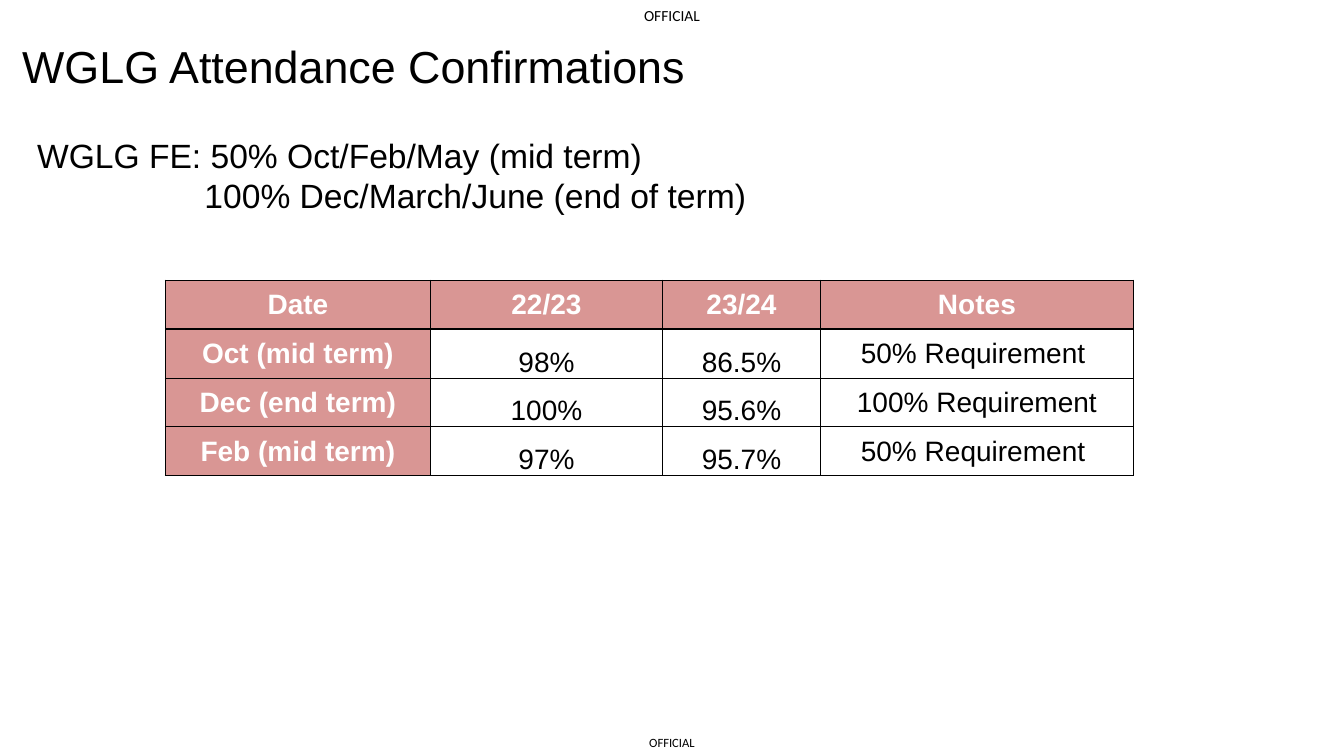
from lxml.etree import SubElement
from pptx import Presentation
from pptx.dml.color import RGBColor
from pptx.enum.text import MSO_ANCHOR as ANCHOR, PP_ALIGN as ALIGN
from pptx.oxml.ns import qn
from pptx.util import Inches, Pt


def format_text(p, size, font="Arial", color="000000", bold=False, align=ALIGN.LEFT):
    p.alignment = align
    for r in p.runs:
        r.font.size, r.font.name, r.font.bold = Pt(size), font, bold
        r.font.color.rgb = RGBColor.from_string(color)


def add_border(cell, side, width):
    ln = SubElement(cell._tc.get_or_add_tcPr(), qn(f"a:{side}"), w=str(Pt(width)))
    SubElement(SubElement(ln, qn("a:solidFill")), qn("a:srgbClr"), val="000000")


prs = Presentation()
prs.slide_width, prs.slide_height = Inches(13.33), Inches(7.5)
s = prs.slides.add_slide(prs.slide_layouts[5])

# Title
title = s.shapes.title
title.left, title.top = Inches(0.12), Inches(0.28)
title.width, title.height = Inches(6.9), Inches(0.75)
tf = title.text_frame
tf.text = "WGLG Attendance Confirmations"
tf.vertical_anchor = ANCHOR.MIDDLE
format_text(tf.paragraphs[0], 32)

# Classification markings at top and bottom
for left, top, width, height, size in [(6.23, 0, 0.87, 0.31, 11), (6.3, 7.23, 0.73, 0.27, 9)]:
    sp = s.shapes.add_textbox(Inches(left), Inches(top), Inches(width), Inches(height))
    tf = sp.text_frame
    tf.margin_left = tf.margin_right = tf.margin_top = tf.margin_bottom = 0
    tf.vertical_anchor = ANCHOR.MIDDLE
    tf.text = "OFFICIAL"
    format_text(tf.paragraphs[0], size, "Calibri", align=ALIGN.CENTER)

# Attendance requirements, second line indented under the first
sp = s.shapes.add_textbox(Inches(0.27), Inches(1.29), Inches(8.04), Inches(0.91))
tf = sp.text_frame
tf.word_wrap = True
tf.text = "WGLG FE: 50% Oct/Feb/May (mid term)\n100% Dec/March/June (end of term)"
for p in tf.paragraphs:
    format_text(p, 24)
tf.paragraphs[1]._p.get_or_add_pPr().set("marL", str(Inches(1.66)))

# Attendance table
rows = [
    ("Date", "22/23", "23/24", "Notes"),
    ("Oct (mid term)", "98%", "86.5%", "50% Requirement "),
    ("Dec (end term)", "100%", "95.6%", "100% Requirement"),
    ("Feb (mid term)", "97%", "95.7%", "50% Requirement "),
]
col_widths = [2.63, 2.3, 1.57, 3.1]
last_row, last_col = len(rows) - 1, len(col_widths) - 1
table = s.shapes.add_table(len(rows), len(col_widths), Inches(1.64), Inches(2.78),
                           Inches(9.6), Inches(1.94)).table
table.first_row = table.horz_banding = False
for col, width in zip(table.columns, col_widths):
    col.width = Inches(width)

for i, values in enumerate(rows):
    for j, value in enumerate(values):
        cell = table.cell(i, j)
        heading = i == 0 or j == 0
        cell.text = value
        cell.margin_left = cell.margin_right = cell.margin_top = Inches(0.01)
        cell.margin_bottom = 0
        cell.vertical_anchor = ANCHOR.MIDDLE if heading or j == last_col else ANCHOR.BOTTOM
        format_text(cell.text_frame.paragraphs[0], 20, color="FFFFFF" if heading else "000000",
                    bold=heading, align=ALIGN.CENTER)
        # Thick lines frame the table and its headings, thin ones divide the rest
        add_border(cell, "lnL", 1 if j <= 1 else 0.5)
        add_border(cell, "lnR", 1 if j in (0, last_col) else 0.5)
        add_border(cell, "lnT", 1 if i <= 1 else 0.5)
        add_border(cell, "lnB", 1 if i in (0, last_row) else 0.5)
        if heading:
            cell.fill.solid()
            cell.fill.fore_color.rgb = RGBColor.from_string("D99694")
        else:
            cell.fill.background()

prs.save("out.pptx")
